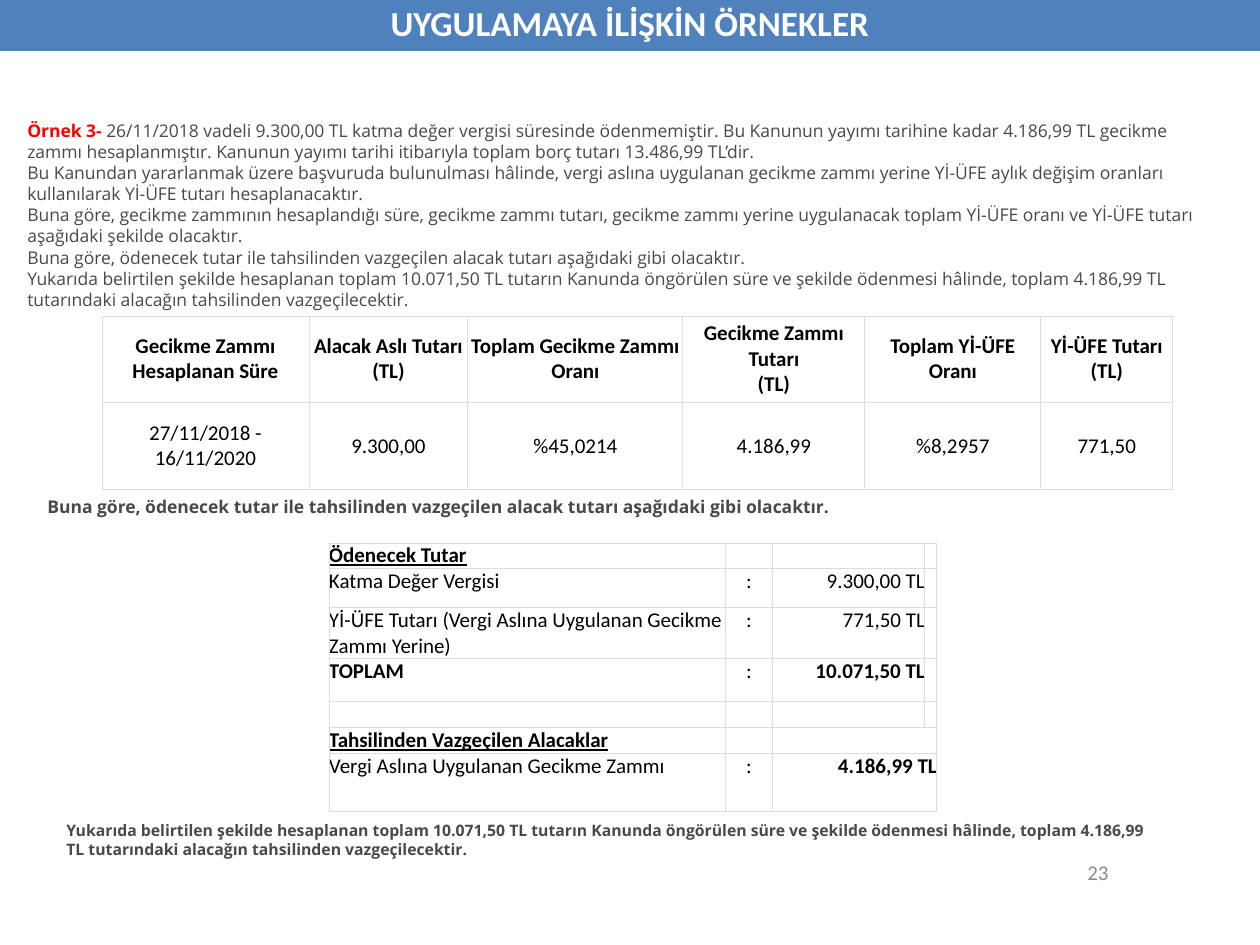
"""Build the slide of worked examples on tax debt restructuring."""
from dataclasses import dataclass

from lxml import etree
from pptx import Presentation
from pptx.dml.color import RGBColor
from pptx.enum.shapes import MSO_SHAPE
from pptx.enum.text import MSO_ANCHOR, PP_ALIGN
from pptx.oxml.ns import qn
from pptx.util import Emu, Pt

RECTANGLE = MSO_SHAPE.RECTANGLE
TOP, MIDDLE = MSO_ANCHOR.TOP, MSO_ANCHOR.MIDDLE
LEFT, CENTER, RIGHT = PP_ALIGN.LEFT, PP_ALIGN.CENTER, PP_ALIGN.RIGHT
EMU_PER_PX = 914400 / 126
COLORS = {
    "banner": "4F81BD", "white": "FFFFFF", "black": "000000", "body": "494949",
    "accent": "FF0000", "number": "8C8C8C", "border": "DDDDDD",
}
HEADING_FONT, BODY_FONT = "Calibri", "Open Sans"


@dataclass(frozen=True)
class Box:
    """Position and size in px."""
    left: int
    top: int
    width: int
    height: int


@dataclass(frozen=True)
class CellText:
    """Text of one table cell with its format."""
    text: str = ""
    align: PP_ALIGN = LEFT
    bold: bool = False
    underline: bool = False
    span: int = 1


@dataclass(frozen=True)
class Note:
    """A text box holding one or more paragraphs in one format."""
    box: Box
    paragraphs: tuple[str, ...]
    size: int = 10
    font: str = BODY_FONT
    color: str = "body"
    bold: bool = False
    align: PP_ALIGN = LEFT
    anchor: MSO_ANCHOR = TOP
    lead: str = ""


CLOSING = (
    "Yukarıda belirtilen şekilde hesaplanan toplam 10.071,50 TL tutarın Kanunda öngörülen süre ve "
    "şekilde ödenmesi hâlinde, toplam 4.186,99 TL tutarındaki alacağın tahsilinden vazgeçilecektir."
)
RESULT = "Buna göre, ödenecek tutar ile tahsilinden vazgeçilen alacak tutarı aşağıdaki gibi olacaktır."
EXAMPLE = (
    "26/11/2018 vadeli 9.300,00 TL katma değer vergisi süresinde ödenmemiştir. Bu Kanunun yayımı "
    "tarihine kadar 4.186,99 TL gecikme zammı hesaplanmıştır. Kanunun yayımı tarihi itibarıyla "
    "toplam borç tutarı 13.486,99 TL’dir.",
    "Bu Kanundan yararlanmak üzere başvuruda bulunulması hâlinde, vergi aslına uygulanan gecikme "
    "zammı yerine Yİ-ÜFE aylık değişim oranları kullanılarak Yİ-ÜFE tutarı hesaplanacaktır.",
    "Buna göre, gecikme zammının hesaplandığı süre, gecikme zammı tutarı, gecikme zammı yerine "
    "uygulanacak toplam Yİ-ÜFE oranı ve Yİ-ÜFE tutarı aşağıdaki şekilde olacaktır.",
    RESULT,
    CLOSING,
)
NOTES = (
    Note(Box(828, 847, 293, 50), ("23",), size=12, font=HEADING_FONT, color="number",
         align=RIGHT, anchor=MIDDLE),
    Note(Box(15, 113, 1221, 204), EXAMPLE, anchor=MIDDLE, lead="Örnek 3- "),
    Note(Box(35, 490, 1150, 34), (RESULT,), bold=True),
    Note(Box(54, 815, 1119, 50), (CLOSING,), size=9, bold=True),
)

RATE_HEADERS = (
    "Gecikme Zammı Hesaplanan Süre", "Alacak Aslı Tutarı\n(TL)", "Toplam Gecikme Zammı Oranı",
    "Gecikme Zammı Tutarı\v(TL)", "Toplam Yİ-ÜFE Oranı", "Yİ-ÜFE Tutarı\v(TL)",
)
RATE_VALUES = ("27/11/2018 - 16/11/2020", "9.300,00", "%45,0214", "4.186,99", "%8,2957", "771,50")
RATE_ROWS = [
    [CellText(text, CENTER, bold=True) for text in RATE_HEADERS],
    [CellText(text, CENTER) for text in RATE_VALUES],
]
EMPTY, COLON = CellText(), CellText(":", CENTER)
PAYMENT_ROWS = [
    [CellText("Ödenecek Tutar", bold=True, underline=True), EMPTY, EMPTY, EMPTY],
    [CellText("Katma Değer Vergisi"), COLON, CellText("9.300,00 TL", RIGHT), EMPTY],
    [CellText("Yİ-ÜFE Tutarı (Vergi Aslına Uygulanan Gecikme Zammı Yerine)"), COLON,
     CellText("771,50 TL", RIGHT), EMPTY],
    [CellText("TOPLAM", bold=True), COLON, CellText("10.071,50 TL", RIGHT, bold=True), EMPTY],
    [EMPTY] * 4,
    [CellText("Tahsilinden Vazgeçilen Alacaklar", bold=True, underline=True), EMPTY,
     CellText(span=2)],
    [CellText("Vergi Aslına Uygulanan Gecikme Zammı"), COLON,
     CellText("4.186,99 TL", RIGHT, bold=True, span=2)],
]


def px(length: int) -> Emu:
    """Turn px into EMU."""
    return Emu(round(length * EMU_PER_PX))


def place(box: Box) -> tuple[Emu, ...]:
    """Return the EMU geometry of a box."""
    return tuple(px(length) for length in (box.left, box.top, box.width, box.height))


def add_text(paragraph, text: str, *, size: int, font: str, color: str, bold: bool = False,
             underline: bool = False, align: PP_ALIGN = LEFT) -> None:
    """Append formatted text, breaking the line at each vertical tab."""
    paragraph.alignment = align
    for index, line in enumerate(text.split("\v")):
        if index:
            paragraph.add_line_break()
        run = paragraph.add_run()
        run.text = line
        run.font.size = Pt(size)
        run.font.name = font
        run.font.bold = bold
        run.font.underline = underline
        run.font.color.rgb = RGBColor.from_string(COLORS[color])


def add_banner(slide, box: Box, title: str) -> None:
    """Draw the title banner."""
    shape = slide.shapes.add_shape(RECTANGLE, *place(box))
    shape.shadow.inherit = False
    shape.fill.solid()
    shape.fill.fore_color.rgb = RGBColor.from_string(COLORS["banner"])
    shape.line.fill.background()
    frame = shape.text_frame
    frame.word_wrap = True
    frame.vertical_anchor = TOP
    paragraph = frame.paragraphs[0]
    paragraph.line_spacing = 0.9
    add_text(paragraph, title, size=20, font=HEADING_FONT, color="white", bold=True, align=CENTER)


def add_note(slide, note: Note) -> None:
    """Draw a wrapped text box."""
    frame = slide.shapes.add_textbox(*place(note.box)).text_frame
    frame.word_wrap = True
    frame.vertical_anchor = note.anchor
    for index, text in enumerate(note.paragraphs):
        paragraph = frame.add_paragraph() if index else frame.paragraphs[0]
        if note.lead and not index:
            add_text(paragraph, note.lead, size=note.size, font=note.font, color="accent", bold=True)
        add_text(paragraph, text, size=note.size, font=note.font, color=note.color,
                 bold=note.bold, align=note.align)


def add_borders(cell) -> None:
    """Give a cell thin lines on all four sides."""
    properties = cell._tc.get_or_add_tcPr()
    for side in ("a:lnL", "a:lnR", "a:lnT", "a:lnB"):
        line = etree.SubElement(properties, qn(side), w=str(Pt(0.6)))
        fill = etree.SubElement(line, qn("a:solidFill"))
        etree.SubElement(fill, qn("a:srgbClr"), val=COLORS["border"])


def fill_cell(cell, content: CellText, anchor: MSO_ANCHOR) -> None:
    """Write the text of a cell."""
    cell.vertical_anchor = anchor
    for index, text in enumerate(content.text.split("\n")):
        paragraph = cell.text_frame.add_paragraph() if index else cell.text_frame.paragraphs[0]
        if text:
            add_text(paragraph, text, size=12, font=HEADING_FONT, color="black",
                     bold=content.bold, underline=content.underline, align=content.align)
        else:
            etree.SubElement(paragraph._p, qn("a:endParaRPr"), sz="1200")


def add_grid(slide, left: int, top: int, widths: list[int], heights: list[int],
             rows: list[list[CellText]], anchor: MSO_ANCHOR) -> None:
    """Draw a bordered white table."""
    box = Box(left, top, sum(widths), sum(heights))
    table = slide.shapes.add_table(len(heights), len(widths), *place(box)).table
    table.first_row = table.horz_banding = False
    for column, width in zip(table.columns, widths):
        column.width = px(width)
    for row, height in zip(table.rows, heights):
        row.height = px(height)
    for cell in table.iter_cells():
        cell.margin_left = cell.margin_right = cell.margin_top = cell.margin_bottom = 0
        add_borders(cell)
        cell.fill.solid()
        cell.fill.fore_color.rgb = RGBColor.from_string(COLORS["white"])
    for row_index, contents in enumerate(rows):
        for column_index, content in enumerate(contents):
            cell = table.cell(row_index, column_index)
            if content.span > 1:
                cell.merge(table.cell(row_index, column_index + content.span - 1))
            fill_cell(cell, content, anchor)


def main() -> None:
    """Build and save the presentation."""
    presentation = Presentation()
    presentation.slide_width, presentation.slide_height = px(1260), px(945)
    slide = presentation.slides.add_slide(presentation.slide_layouts[6])
    add_banner(slide, Box(0, 0, 1260, 51), "UYGULAMAYA İLİŞKİN ÖRNEKLER")
    add_grid(slide, 102, 316, [207, 159, 215, 182, 176, 132], [86, 88], RATE_ROWS, MIDDLE)
    add_grid(slide, 329, 543, [396, 48, 152, 12], [25, 39, 50, 43, 25, 25, 58], PAYMENT_ROWS, TOP)
    for note in NOTES:
        add_note(slide, note)
    presentation.save("out.pptx")


if __name__ == "__main__":
    main()
